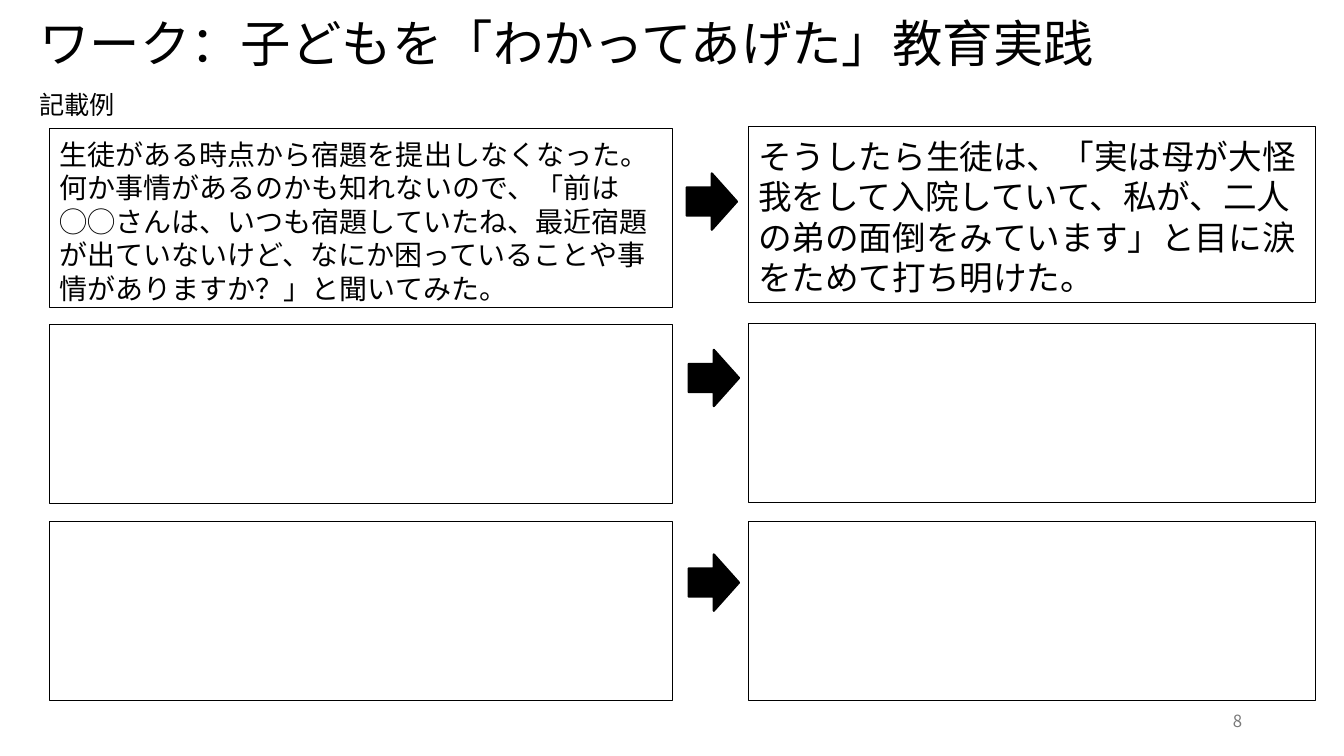
from lxml import etree
from pptx import Presentation
from pptx.dml.color import RGBColor
from pptx.enum.shapes import MSO_SHAPE as Shape
from pptx.enum.text import MSO_ANCHOR as Anchor, MSO_AUTO_SIZE as AutoSize, PP_ALIGN as Align
from pptx.oxml.ns import qn
from pptx.util import Inches, Pt

COLORS = {"ink": "000000", "paper": "FFFFFF", "muted": "797979"}
FONT = "Noto Sans CJK JP"


class Sheet:
    """Style and current slide of the worksheet."""

    def __init__(self, prs):
        self.slide = prs.slides.add_slide(prs.slide_layouts[5])
        fill = self.slide.background.fill
        fill.solid()
        fill.fore_color.rgb = self.color("paper")

    def color(self, name):
        return RGBColor.from_string(COLORS[name])

    def set_text(self, sp, text, size, color="ink", align=Align.LEFT,
                 anchor=Anchor.TOP, spacing=None, top=0.05):
        tf = sp.text_frame
        frame = {"word_wrap": True, "auto_size": AutoSize.NONE,
                 "vertical_anchor": anchor, "margin_top": Inches(top)}
        for key, value in frame.items():
            setattr(tf, key, value)
        p = tf.paragraphs[0]
        p.alignment = align
        p.line_spacing = spacing
        r = p.add_run()
        r.text = text
        for key, value in {"name": FONT, "size": Pt(size), "bold": False}.items():
            setattr(r.font, key, value)
        r.font.color.rgb = self.color(color)
        # East Asian text takes its own typeface element
        ea = etree.Element(qn("a:ea"), typeface=FONT)
        r.font._element.find(qn("a:latin")).addnext(ea)

    def title(self, text, box, size):
        sp = self.slide.shapes.title
        for key, value in zip(("left", "top", "width", "height"), box):
            setattr(sp, key, Inches(value))
        self.set_text(sp, text, size, anchor=Anchor.MIDDLE, spacing=0.9)

    def label(self, text, box, size, **style):
        sp = self.slide.shapes.add_textbox(*map(Inches, box))
        self.set_text(sp, text, size, **style)

    def shape(self, kind, box, line_width, fill=None):
        sp = self.slide.shapes.add_shape(kind, *map(Inches, box))
        sp.shadow.inherit = False
        if fill:
            sp.fill.solid()
            sp.fill.fore_color.rgb = self.color(fill)
        else:
            sp.fill.background()
        sp.line.color.rgb = self.color("ink")
        sp.line.width = Pt(line_width)
        return sp

    def panel(self, box, text="", size=20):
        sp = self.shape(Shape.RECTANGLE, box, 0.75)
        if text:
            self.set_text(sp, text, size, spacing=Pt(size * 1.2), top=0.09)

    def arrow(self, left, top):
        self.shape(Shape.RIGHT_ARROW, (left, top, 0.5, 0.56), 1.5, "ink")


def main():
    prs = Presentation()
    prs.slide_width, prs.slide_height = Inches(13.33), Inches(7.5)
    sheet = Sheet(prs)

    # Heading
    sheet.title("ワーク：子どもを「わかってあげた」教育実践", (0.29, 0.14, 12.13, 0.63), 36)
    sheet.label("記載例", (0.29, 0.81, 1.24, 0.4), 18, spacing=Pt(21.6), top=0.08)

    # Example texts: what the teacher did, how the pupil answered
    action = ("生徒がある時点から宿題を提出しなくなった。何か事情があるのかも知れないので、"
              "「前は◯◯さんは、いつも宿題していたね、最近宿題が出ていないけど、"
              "なにか困っていることや事情がありますか？」と聞いてみた。")
    answer = ("そうしたら生徒は、「実は母が大怪我をして入院していて、私が、"
              "二人の弟の面倒をみています」と目に涙をためて打ち明けた。")

    # Rows: left top, right top, right height, arrow position, texts
    rows = [
        (1.27, 1.26, 1.74, (6.81, 1.72), action, answer),
        (3.22, 3.21, 1.78, (6.83, 3.47), "", ""),
        (5.17, 5.17, 1.78, (6.83, 5.5), "", ""),
    ]
    for left_top, right_top, right_height, arrow, left_text, right_text in rows:
        sheet.panel((0.49, left_top, 6.18, 1.78), left_text, 20)
        sheet.arrow(*arrow)
        sheet.panel((7.42, right_top, 5.63, right_height), right_text, 24)

    # Page number
    sheet.label("8", (9.42, 6.95, 3, 0.4), 12, color="muted",
                align=Align.RIGHT, anchor=Anchor.MIDDLE)

    prs.save("out.pptx")


if __name__ == "__main__":
    main()
